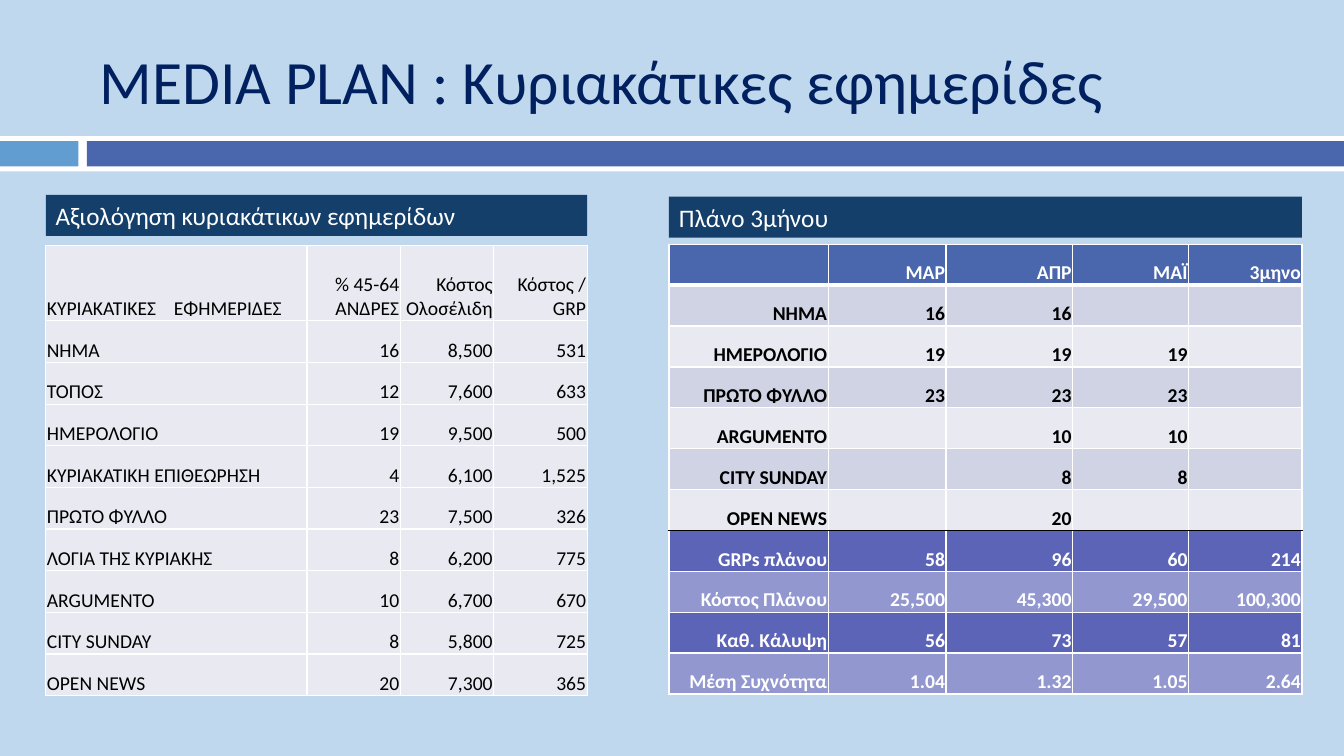
"""Build the media plan slide for Sunday newspapers."""
from dataclasses import dataclass

from lxml.etree import SubElement as Sub
from pptx import Presentation
from pptx.dml.color import RGBColor as RGB
from pptx.enum.shapes import MSO_SHAPE as Kind
from pptx.enum.text import MSO_ANCHOR as Anchor, PP_ALIGN as Align
from pptx.oxml.ns import qn
from pptx.util import Pt

FONT = "Calibri"
HEX = {
    "sky": "C0D8ED", "white": "FFFFFF", "black": "000000", "title": "002060",
    "azure": "629DD1", "blue": "4A66AC", "navy": "143F6A", "pale": "E9EAF1",
    "grey": "D0D3E3", "deep": "5C64B7", "lilac": "9297CF",
}


@dataclass
class Box:
    x: float
    y: float
    w: float
    h: float
    fill: str = ""
    text: str = ""
    size: float = 18
    ink: str = "white"


@dataclass
class Row:
    cells: list[str]
    fill: str = "pale"
    ink: str = "black"
    top: str = "white"
    base: str = "white"
    thick: float = 1


@dataclass
class Grid:
    x: float
    y: float
    cols: list[float]
    tall: list[float]
    rows: list[Row]
    bold: bool
    first: Align


BOXES = [
    Box(0, 97.2, 960, 25.2, "white"),
    Box(0, 100.8, 56, 18, "azure"),
    Box(62, 100.8, 898, 18, "blue"),
    Box(64, 18, 773, 78, "", "MEDIA PLAN : Κυριακάτικες εφημερίδες", 44, "title"),
    Box(32.7, 139.3, 386.7, 29.3, "navy", "Αξιολόγηση κυριακάτικων εφημερίδων"),
    Box(477.8, 140.5, 452.2, 29.3, "navy", "Πλάνο 3μήνου"),
]

PAPERS = [
    ["ΚΥΡΙΑΚΑΤΙΚΕΣ\tΕΦΗΜΕΡΙΔΕΣ", "% 45-64 ΑΝΔΡΕΣ", "Κόστος Ολοσέλιδη", "Κόστος / GRP"],
    ["ΝΗΜΑ", "16", "8,500", "531"],
    ["ΤΟΠΟΣ", "12", "7,600", "633"],
    ["ΗΜΕΡΟΛΟΓΙΟ", "19", "9,500", "500"],
    ["ΚΥΡΙΑΚΑΤΙΚΗ ΕΠΙΘΕΩΡΗΣΗ", "4", "6,100", "1,525"],
    ["ΠΡΩΤΟ ΦΥΛΛΟ", "23", "7,500", "326"],
    ["ΛΟΓΙΑ ΤΗΣ ΚΥΡΙΑΚΗΣ", "8", "6,200", "775"],
    ["ARGUMENTO", "10", "6,700", "670"],
    ["CITY SUNDAY", "8", "5,800", "725"],
    ["OPEN NEWS", "20", "7,300", "365"],
]

PLAN = [
    Row(["", "ΜΑΡ", "ΑΠΡ", "ΜΑΪ", "3μηνο"], "blue", "white", thick=3),
    Row(["ΝΗΜΑ", "16", "16", "", ""], "grey"),
    Row(["ΗΜΕΡΟΛΟΓΙΟ", "19", "19", "19", ""]),
    Row(["ΠΡΩΤΟ ΦΥΛΛΟ", "23", "23", "23", ""], "grey"),
    Row(["ARGUMENTO", "", "10", "10", ""]),
    Row(["CITY SUNDAY", "", "8", "8", ""], "grey"),
    Row(["OPEN NEWS", "", "20", "", ""], base="black"),
    Row(["GRPs πλάνου", "58", "96", "60", "214"], "deep", "white", top="black"),
    Row(["Κόστος Πλάνου", "25,500", "45,300", "29,500", "100,300"], "lilac", "white"),
    Row(["Καθ. Κάλυψη", "56", "73", "57", "81"], "deep", "white"),
    Row(["Μέση Συχνότητα", "1.04", "1.32", "1.05", "2.64"], "lilac", "white"),
]

GRIDS = [
    Grid(32.7, 175.2, [186.6] + [66.7] * 3, [54] + [29.75] * 9,
         [Row(line) for line in PAPERS], False, Align.LEFT),
    Grid(477.8, 174.5, [113.8, 84.2, 90.4, 82.8, 81], [29.2] * 11,
         PLAN, True, Align.RIGHT),
]


def tone(name: str) -> RGB:
    return RGB.from_string(HEX[name])


def style(para, size: float, ink: str, bold: bool = False) -> None:
    for run in para.runs:
        font = run.font
        font.name, font.size, font.bold = FONT, Pt(size), bold
        font.color.rgb = tone(ink)


def draw_box(slide, box: Box) -> None:
    area = [Pt(n) for n in (box.x, box.y, box.w, box.h)]
    if box.fill:
        shape = slide.shapes.add_shape(Kind.RECTANGLE, *area)
        shape.shadow.inherit = False
        shape.fill.solid()
        shape.fill.fore_color.rgb = tone(box.fill)
        shape.line.fill.background()
    else:
        shape = slide.shapes.add_textbox(*area)
    if box.text:
        frame = shape.text_frame
        frame.word_wrap = True
        frame.vertical_anchor = Anchor.MIDDLE
        frame.text = box.text
        para = frame.paragraphs[0]
        para.alignment = Align.LEFT
        style(para, box.size, box.ink)


def edge(cell, side: str, ink: str, width: float = 1) -> None:
    props = cell._tc.get_or_add_tcPr()
    line = Sub(props, qn(f"a:ln{side}"), w=str(Pt(width)))
    Sub(Sub(line, qn("a:solidFill")), qn("a:srgbClr"), val=HEX[ink])


def add_tab(para, stop: float) -> None:
    tabs = Sub(para._p.get_or_add_pPr(), qn("a:tabLst"))
    Sub(tabs, qn("a:tab"), pos=str(Pt(stop)), algn="l")


def fill_cell(cell, text: str, row: Row, bold: bool, align: Align) -> None:
    edge(cell, "L", "white")
    edge(cell, "R", "white")
    edge(cell, "T", row.top)
    edge(cell, "B", row.base, row.thick)
    cell.fill.solid()
    cell.fill.fore_color.rgb = tone(row.fill)
    cell.margin_left = cell.margin_right = cell.margin_top = Pt(0.75)
    cell.margin_bottom = Pt(0)
    cell.vertical_anchor = Anchor.BOTTOM
    cell.text_frame.text = text
    para = cell.text_frame.paragraphs[0]
    para.alignment = align
    if "\t" in text:
        add_tab(para, 90.7)
    style(para, 14, row.ink, bold)


def draw_grid(slide, grid: Grid) -> None:
    table = slide.shapes.add_table(
        len(grid.rows), len(grid.cols), Pt(grid.x), Pt(grid.y),
        Pt(sum(grid.cols)), Pt(sum(grid.tall))).table
    table.first_row = table.horz_banding = False
    for col, width in zip(table.columns, grid.cols):
        col.width = Pt(width)
    for r, row in enumerate(grid.rows):
        table.rows[r].height = Pt(grid.tall[r])
        for c, text in enumerate(row.cells):
            align = Align.RIGHT if c else grid.first
            fill_cell(table.cell(r, c), text, row, grid.bold, align)


def main() -> None:
    deck = Presentation()
    deck.slide_width, deck.slide_height = Pt(960), Pt(540)
    slide = deck.slides.add_slide(deck.slide_layouts[6])
    back = slide.background.fill
    back.solid()
    back.fore_color.rgb = tone("sky")
    for box in BOXES:
        draw_box(slide, box)
    for grid in GRIDS:
        draw_grid(slide, grid)
    deck.save("out.pptx")


if __name__ == "__main__":
    main()
